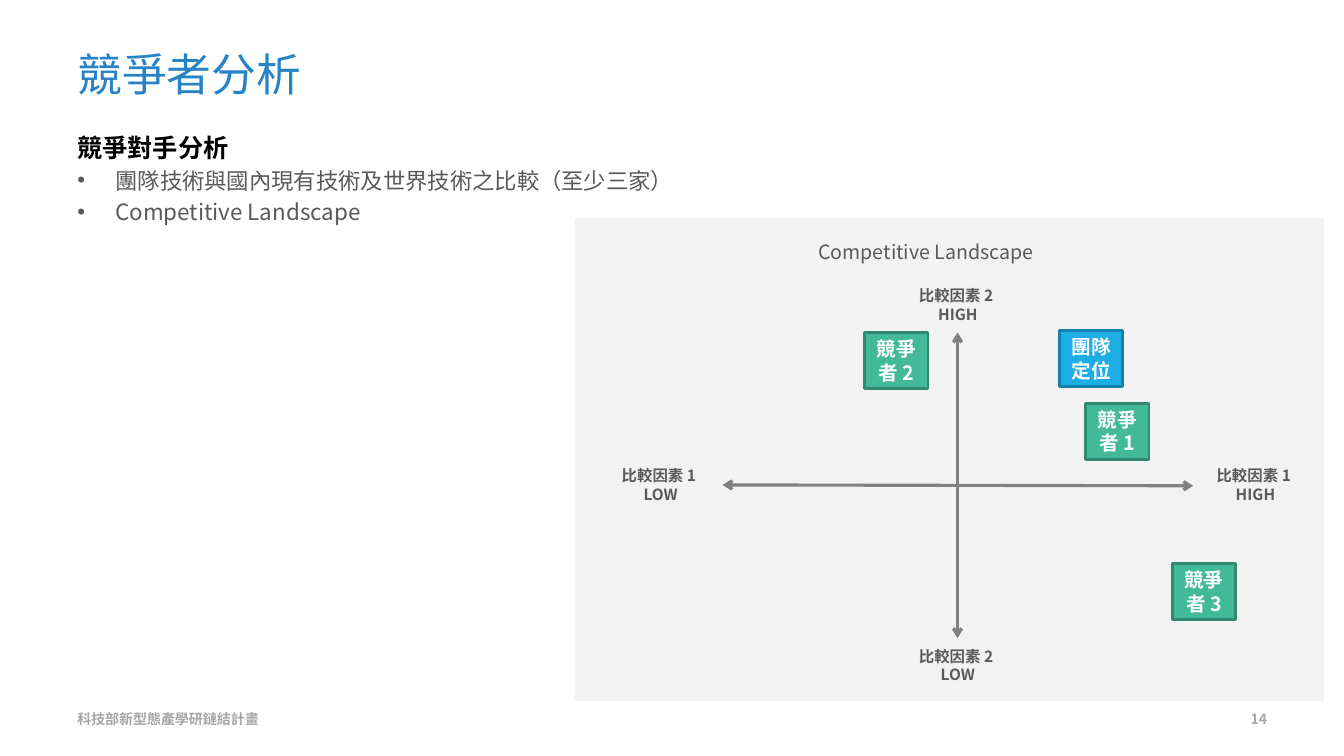
import lxml.etree
import pptx
import pptx.dml.color
import pptx.enum.shapes
import pptx.enum.text
import pptx.oxml.ns
import pptx.util

Cm, Pt = pptx.util.Cm, pptx.util.Pt
RGB = pptx.dml.color.RGBColor.from_string
qn = pptx.oxml.ns.qn
Align = pptx.enum.text.PP_ALIGN
Anchor = pptx.enum.text.MSO_ANCHOR
Rect = pptx.enum.shapes.MSO_SHAPE.RECTANGLE
Line = pptx.enum.shapes.MSO_CONNECTOR.STRAIGHT


class Theme:
    sans, body = "Noto Sans CJK SC", "Noto Sans CJK TC"
    title, head, item, chip, label, foot = 32, 18, 16, 14, 11, 10
    blue, black, gray, pale, white = "2683C6", "000000", "595959", "A6A6A6", "FFFFFF"
    panel, axis = "F2F2F2", "808080"
    team, rival = ("1CADE4", "1580A9"), ("42BA97", "318A70")


def style(para, size, color, bold=False, align=Align.LEFT, face=Theme.sans):
    """Set alignment and font, for Latin and East Asian text alike."""
    para.alignment = align
    font = para.font
    font.size, font.bold, font.name = Pt(size), bold, face
    font.color.rgb = RGB(color)
    props = para._p.pPr.find(qn("a:defRPr"))
    lxml.etree.SubElement(props, qn("a:ea")).set("typeface", face)


def put(spot, text, colors=None, anchor=Anchor.TOP, wrap=True):
    """Add a text box, or a rectangle when fill and line colors are given."""
    place = [Cm(n) for n in spot]
    if colors:
        shape = slide.shapes.add_shape(Rect, *place)
        shape.shadow.inherit = False
        shape.fill.solid()
        shape.fill.fore_color.rgb = RGB(colors[0])
        shape.line.color.rgb = RGB(colors[1])
        shape.line.width = Pt(2)
    else:
        shape = slide.shapes.add_textbox(*place)
    frame = shape.text_frame
    frame.word_wrap = wrap
    frame.vertical_anchor = anchor
    frame.text = text
    return frame.paragraphs


deck = pptx.Presentation()
deck.slide_width, deck.slide_height = Cm(33.87), Cm(19.05)
slide = deck.slides.add_slide(deck.slide_layouts[6])

# Title, bullets and footer
title = put((1.7, 0.76, 30.48, 2.18), "競爭者分析", anchor=Anchor.MIDDLE)
style(title[0], Theme.title, Theme.blue)

head, *items = put(
    (1.7, 3.2, 30.48, 14.12),
    "競爭對手分析\n團隊技術與國內現有技術及世界技術之比較（至少三家）\nCompetitive Landscape",
)
style(head, Theme.head, Theme.black, True, face=Theme.body)
for item in items:
    item.space_before = Pt(3.2)
    props = item._p.get_or_add_pPr()
    props.set("marL", str(Cm(0.96)))
    props.set("indent", str(-Cm(0.96)))
    lxml.etree.SubElement(props, qn("a:buFont")).set("typeface", "Arial")
    lxml.etree.SubElement(props, qn("a:buChar")).set("char", "•")
    style(item, Theme.item, Theme.gray, face=Theme.body)

for left, text, align in (
    (1.7, "科技部新型態產學研鏈結計畫", Align.LEFT),
    (24.28, "14", Align.RIGHT),
):
    foot = put((left, 17.6, 7.9, 1.02), text, anchor=Anchor.MIDDLE)
    style(foot[0], Theme.foot, Theme.pale, True, align)

# Landscape panel and axes
put((14.53, 5.54, 18.8, 12.09), "", (Theme.panel, Theme.panel))
for ends in ((18.21, 12.22, 30.07, 12.24), (24.13, 8.38, 24.13, 16.08)):
    axis = slide.shapes.add_connector(Line, *[Cm(n) for n in ends])
    axis.line.color.rgb = RGB(Theme.axis)
    axis.line.width = Pt(2.25)
    stroke = axis.line._get_or_add_ln()
    for tip in ("a:headEnd", "a:tailEnd"):
        lxml.etree.SubElement(stroke, qn(tip)).set("type", "arrow")
    lxml.etree.SubElement(axis._element.spPr, qn("a:effectLst"))

for left, top, factor, level in (
    (15.34, 11.63, 1, "LOW"),
    (30.33, 11.63, 1, "HIGH"),
    (22.83, 16.18, 2, "LOW"),
    (22.83, 7.09, 2, "HIGH"),
):
    text = f"比較因素 {factor} \n{level}"
    for para in put((left, top, 2.62, 1.19), text, wrap=False):
        style(para, Theme.label, Theme.gray, True, Align.CENTER)

# Positions on the map
for left, top, name, colors in (
    (26.7, 8.33, "團隊定位", Theme.team),
    (27.36, 10.16, "競爭者 1", Theme.rival),
    (21.79, 8.38, "競爭者 2", Theme.rival),
    (29.54, 14.2, "競爭者 3", Theme.rival),
):
    chip = put((left, top, 1.6, 1.42), name, colors, Anchor.MIDDLE)
    style(chip[0], Theme.chip, Theme.white, True, Align.CENTER)

caption = put((20.37, 5.92, 7.01, 0.86), "Competitive Landscape")
style(caption[0], Theme.chip, Theme.gray)

deck.save("out.pptx")
